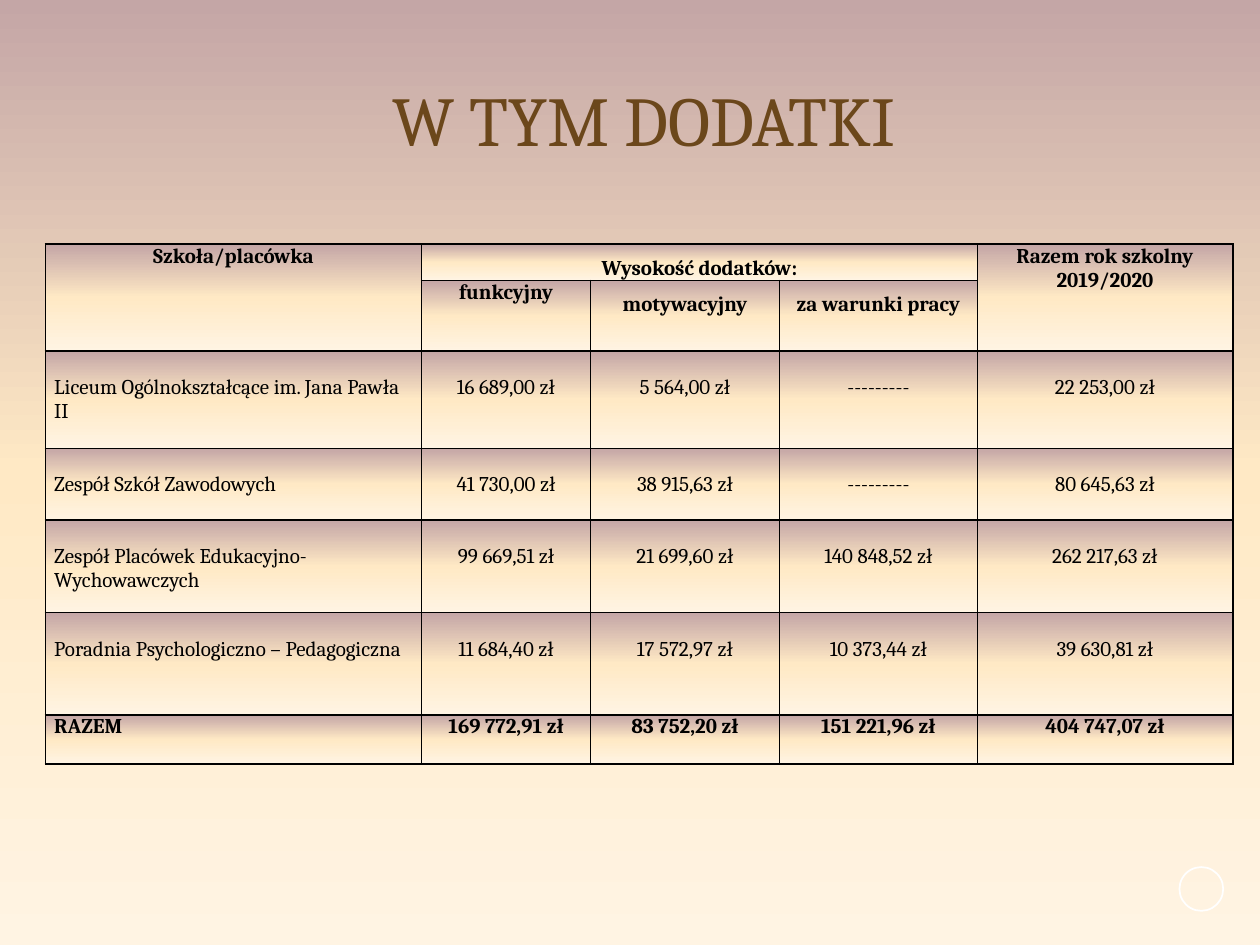
"""Build the slide with the table of school allowances."""
from lxml.etree import SubElement
from pptx import Presentation
from pptx.dml.color import RGBColor
from pptx.enum.shapes import MSO_SHAPE as Shape
from pptx.enum.text import MSO_ANCHOR as Anchor, PP_ALIGN as Align
from pptx.oxml import parse_xml
from pptx.oxml.ns import nsdecls, qn
from pptx.util import Pt


def color(value):
    return RGBColor.from_string(value)


def paint_gradient(fill, element):
    fill.solid()
    solid = next(element.iter(qn("a:solidFill")))
    stops = "".join(
        f'<a:gs pos="{place}"><a:srgbClr val="{value}"/></a:gs>'
        for place, value in ((0, "C4A6A6"), (50000, "FFE9C5"), (100000, "FFF4E3"))
    )
    gradient = parse_xml(
        f'<a:gradFill {nsdecls("a")} rotWithShape="1"><a:gsLst>{stops}</a:gsLst>'
        '<a:lin ang="5400000" scaled="0"/></a:gradFill>'
    )
    solid.getparent().replace(solid, gradient)


WIDTHS = [215, 96.5, 108, 113, 146]
HEIGHTS = [20.5, 40.5, 55.5, 41, 53, 58.5, 28]
ROWS = [
    ["Szkoła/placówka", "Wysokość dodatków:", "", "", "Razem rok szkolny\n2019/2020"],
    ["", "funkcyjny", "motywacyjny", "za warunki pracy", ""],
    ["Liceum Ogólnokształcące im. Jana Pawła II",
     "16 689,00 zł", "5 564,00 zł", "---------", "22 253,00 zł"],
    ["Zespół Szkół Zawodowych",
     "41 730,00 zł", "38 915,63 zł", "---------", "80 645,63 zł"],
    ["Zespół Placówek Edukacyjno-Wychowawczych",
     "99 669,51 zł", "21 699,60 zł", "140 848,52 zł", "262 217,63 zł"],
    ["Poradnia Psychologiczno – Pedagogiczna",
     "11 684,40 zł", "17 572,97 zł", "10 373,44 zł", "39 630,81 zł"],
    ["RAZEM", "169 772,91 zł", "83 752,20 zł", "151 221,96 zł", "404 747,07 zł"],
]
LOOSE_HEADERS = ("Wysokość dodatków:", "motywacyjny", "za warunki pracy")

deck = Presentation()
deck.slide_width, deck.slide_height = Pt(720), Pt(540)
page = deck.slides.add_slide(deck.slide_layouts[5])
paint_gradient(page.background.fill, page.element)

ring = page.shapes.add_shape(Shape.OVAL, Pt(674), Pt(495.5), Pt(25), Pt(25))
ring.shadow.inherit = False
ring.fill.background()
ring.line.color.rgb = color("FFFFFF")
ring.line.width = Pt(1)

title = page.shapes.title
title.left, title.top, title.width, title.height = Pt(26), Pt(37.5), Pt(684), Pt(66)
title.text_frame.text = "W TYM DODATKI"
title.text_frame.vertical_anchor = Anchor.MIDDLE
para = title.text_frame.paragraphs[0]
para.alignment = Align.CENTER
para.line_spacing = 0.9
para.font.name, para.font.size = "Cambria", Pt(40)
para.font.color.rgb = color("6B471B")

table = page.shapes.add_table(
    len(ROWS), len(WIDTHS), Pt(26), Pt(139.5), Pt(sum(WIDTHS)), Pt(sum(HEIGHTS))
).table
table.first_row = table.horz_banding = False
for column, width in zip(table.columns, WIDTHS):
    column.width = Pt(width)
for row, height in zip(table.rows, HEIGHTS):
    row.height = Pt(height)

for row_index, texts in enumerate(ROWS):
    is_school = 2 <= row_index <= 5
    for column_index, text in enumerate(texts):
        cell = table.cell(row_index, column_index)
        cell.text = text
        cell.vertical_anchor = Anchor.TOP
        cell.margin_left = cell.margin_right = Pt(5)
        cell.margin_top = Pt(14 if is_school else 0)
        cell.margin_bottom = Pt(0)
        paint_gradient(cell.fill, cell._tc)
        properties = cell._tc.tcPr
        for position, side in enumerate(("lnL", "lnR", "lnT", "lnB")):
            border = SubElement(properties, qn(f"a:{side}"), w=str(Pt(1)))
            ink = SubElement(border, qn("a:solidFill"))
            SubElement(ink, qn("a:srgbClr"), val="000000")
            properties.insert(position, border)
        for para in cell.text_frame.paragraphs:
            is_name = column_index == 0 and row_index >= 2
            para.alignment = Align.LEFT if is_name else Align.CENTER
            para.line_spacing = 1.5 if text in LOOSE_HEADERS else 1.0
            para.font.name, para.font.size = "Cambria", Pt(12)
            para.font.bold = not is_school
            para.font.color.rgb = color("000000")

for first, last in (((0, 0), (1, 0)), ((0, 1), (0, 3)), ((0, 4), (1, 4))):
    table.cell(*first).merge(table.cell(*last))

deck.save("out.pptx")
